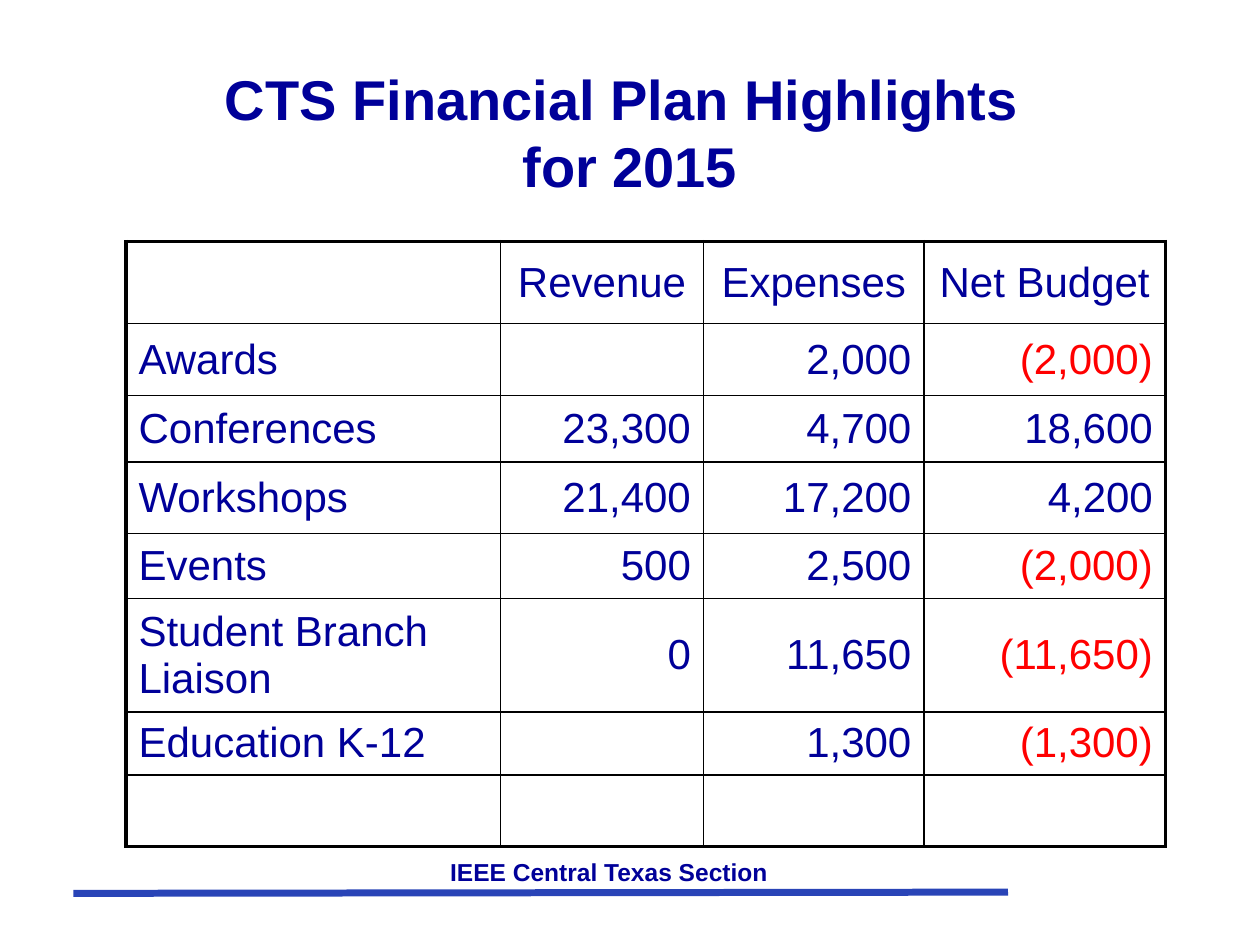
"""Build the financial plan highlights slide."""
import lxml.etree
import pptx
import pptx.dml.color
import pptx.enum.shapes
import pptx.enum.text
import pptx.oxml.ns
import pptx.util

Pt = pptx.util.Pt
ALIGN = pptx.enum.text.PP_ALIGN
MIDDLE = pptx.enum.text.MSO_ANCHOR.MIDDLE
NAVY, RED, BLACK, BLUE = "000099", "FF0000", "000000", "2944B7"
BUDGET = [
    ["", "Revenue", "Expenses", "Net Budget"],
    ["Awards", "", "2,000", "(2,000)"],
    ["Conferences", "23,300", "4,700", "18,600"],
    ["Workshops", "21,400", "17,200", "4,200"],
    ["Events", "500", "2,500", "(2,000)"],
    ["Student Branch Liaison", "0", "11,650", "(11,650)"],
    ["Education K-12", "", "1,300", "(1,300)"],
    ["", "", "", ""],
]
COLUMN_WIDTHS = [214, 116, 126, 138]
ROW_HEIGHTS = [47, 41, 38, 41, 37, 61, 36, 41]


def color(value):
    """Turn a hex string into a colour."""
    return pptx.dml.color.RGBColor.from_string(value)


def write(para, text, size, align, bold=False, ink=NAVY):
    """Fill a paragraph with styled text."""
    para.text = text
    para.alignment = align
    font = para.font
    font.name, font.size, font.bold = "Arial", Pt(size), bold
    font.color.rgb = color(ink)


def add_text(slide, left, top, width, height, text, size, anchor):
    """Add a centred bold text box."""
    box = slide.shapes.add_textbox(Pt(left), Pt(top), Pt(width), Pt(height))
    box.text_frame.word_wrap = True
    box.text_frame.vertical_anchor = anchor
    write(box.text_frame.paragraphs[0], text, size, ALIGN.CENTER, bold=True)


def add_rule(slide, start, end, width):
    """Add a straight line without a shadow."""
    points = [Pt(value) for value in (*start, *end)]
    rule = slide.shapes.add_connector(pptx.enum.shapes.MSO_CONNECTOR.STRAIGHT, *points)
    rule.line.width = Pt(width)
    rule.line.color.rgb = color(BLUE)
    lxml.etree.SubElement(rule._element.spPr, pptx.oxml.ns.qn("a:effectLst"))


def set_borders(cell, widths):
    """Draw the left, right, top and bottom borders of a cell."""
    properties = cell._tc.get_or_add_tcPr()
    qn = pptx.oxml.ns.qn
    for side, width in zip("LRTB", widths):
        line = lxml.etree.SubElement(properties, qn(f"a:ln{side}"), w=str(Pt(width)))
        fill = lxml.etree.SubElement(line, qn("a:solidFill"))
        lxml.etree.SubElement(fill, qn("a:srgbClr"), val=BLACK)


def add_budget(slide, left, top):
    """Add the budget table with a heavy outer frame."""
    last_row, last_column = len(ROW_HEIGHTS) - 1, len(COLUMN_WIDTHS) - 1
    frame = slide.shapes.add_table(
        len(ROW_HEIGHTS), len(COLUMN_WIDTHS), Pt(left), Pt(top),
        Pt(sum(COLUMN_WIDTHS)), Pt(sum(ROW_HEIGHTS)))
    table = frame.table
    table.first_row = table.horz_banding = False
    for column, width in zip(table.columns, COLUMN_WIDTHS):
        column.width = Pt(width)
    for row, height in zip(table.rows, ROW_HEIGHTS):
        row.height = Pt(height)
    for i, values in enumerate(BUDGET):
        for j, text in enumerate(values):
            cell = table.cell(i, j)
            edges = (j == 0, j == last_column, i == 0, i == last_row)
            set_borders(cell, [2.25 if outer else 1 for outer in edges])
            cell.fill.background()
            cell.vertical_anchor = MIDDLE
            align = ALIGN.CENTER if i == 0 else ALIGN.RIGHT if j else ALIGN.LEFT
            ink = RED if text.startswith("(") else NAVY
            write(cell.text_frame.paragraphs[0], text, 24, align, ink=ink)


def main():
    """Build and save the deck."""
    deck = pptx.Presentation()
    deck.slide_width, deck.slide_height = Pt(720), Pt(540)
    slide = deck.slides.add_slide(deck.slide_layouts[6])
    add_rule(slide, (42, 510.5), (576, 509.8), 4)
    add_text(slide, 126, 486, 444, 24, "IEEE Central Texas Section", 14, MIDDLE)
    add_text(slide, 54, 30, 612, 90,
             "CTS Financial Plan Highlights \vfor 2015", 32, MIDDLE)
    add_budget(slide, 72, 138)
    deck.save("out.pptx")


if __name__ == "__main__":
    main()
